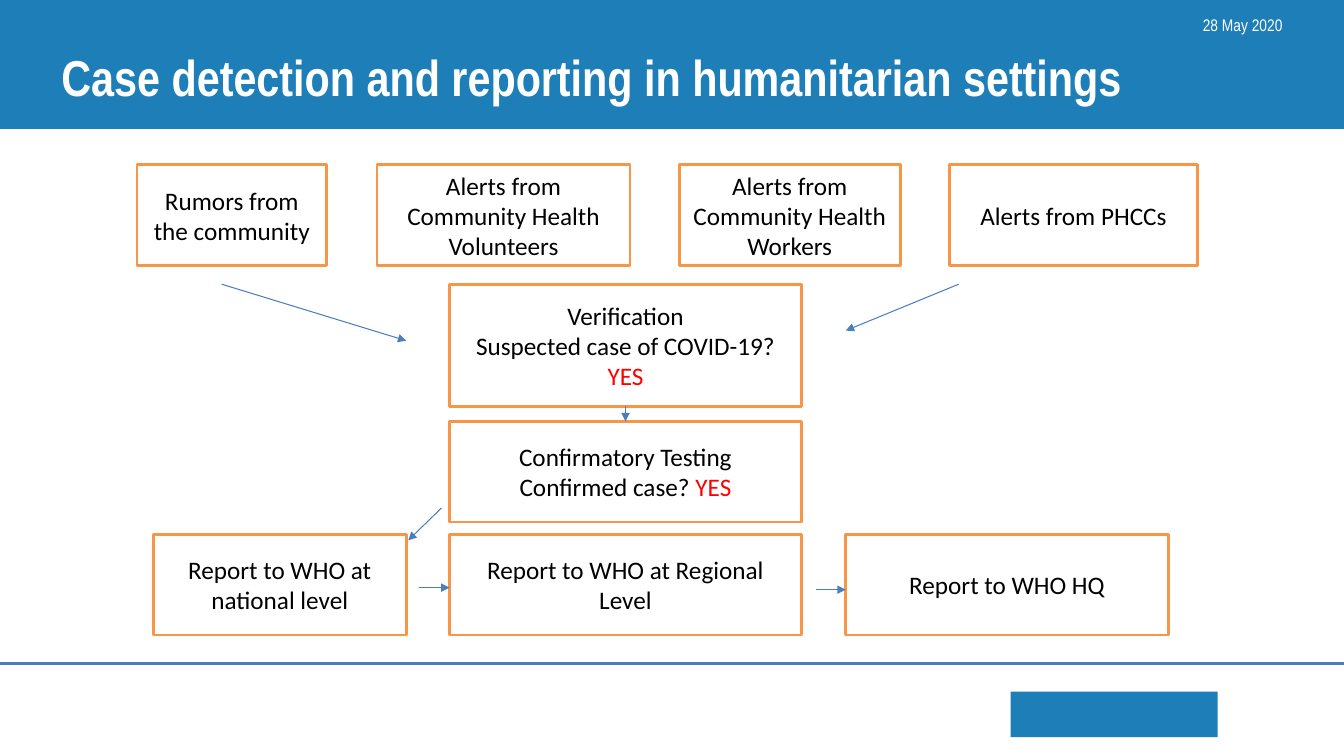
from lxml import etree
from pptx import Presentation, util as u
from pptx.dml.color import RGBColor
from pptx.enum import shapes, text
from pptx.oxml.ns import qn

# Content: lengths are hundredths of the slide's width and height
TITLE = "Case detection and reporting in humanitarian settings"
DATE = "28 May 2020"
HUES = {"band": "1E7FB8", "rule": "4B7EBC", "edge": "F79646",
        "white": "FFFFFF", "black": "000000", "red": "FF0000"}
MID = (33.45, 26.18)  # left and width of the middle column
LOW = 13.33           # usual box height

# Each row: top, height, then boxes of (left, width) and lines
ROWS = [
    (21.8, LOW, [
        ((10.2, 14.1), ["Rumors from the community"]),
        ((28.05, 18.83), ["Alerts from Community Health Volunteers"]),
        ((50.55, 16.43), ["Alerts from Community Health Workers"]),
        ((70.65, 18.45), ["Alerts from PHCCs"])]),
    (37.6, 16.13, [
        (MID, ["Verification", "Suspected case of COVID-19?", "YES"])]),
    (55.73, LOW, [
        (MID, ["Confirmatory Testing", "Confirmed case? YES"])]),
    (70.67, LOW, [
        ((11.4, 18.83), ["Report to WHO at national level"]),
        (MID, ["Report to WHO at Regional Level"]),
        ((62.93, 24), ["Report to WHO HQ"])]),
]
AXIS = MID[0] + MID[1] / 2
ARROWS = [
    (16.5, 37.6, 30.23, 45.07),
    (71.33, 37.6, 62.93, 43.73),
    (AXIS, 53.73, AXIS, 55.73),
    (32.85, 67.2, 30.38, 71.47),
    (31.2, 77.73, MID[0], 77.73),
    (60.75, 78, 62.93, 78),
]

deck = Presentation()
deck.slide_width, deck.slide_height = u.Inches(13.333), u.Inches(7.5)
slide = deck.slides.add_slide(deck.slide_layouts[6])


def hue(name):
    return RGBColor.from_string(HUES[name])


def across(share):
    return round(deck.slide_width * share / 100)


def down(share):
    return round(deck.slide_height * share / 100)


def place(left, top, width, height):
    return across(left), down(top), across(width), down(height)


def style(font, face, size, color, bold=False):
    font.name, font.size, font.bold = face, u.Pt(size), bold
    font.color.rgb = hue(color)


def block(spot, fill, edge=None):
    box = slide.shapes.add_shape(shapes.MSO_SHAPE.RECTANGLE, *place(*spot))
    box.shadow.inherit = False
    box.fill.solid()
    box.fill.fore_color.rgb = hue(fill)
    if edge:
        box.line.color.rgb, box.line.width = hue(edge), u.Pt(2)
    else:
        box.line.fill.background()
    return box


def label(spot, words, size, align, bold=False):
    frame = slide.shapes.add_textbox(*place(*spot)).text_frame
    frame.word_wrap = True
    frame.vertical_anchor = text.MSO_ANCHOR.MIDDLE
    para = frame.paragraphs[0]
    para.text, para.alignment = words, align
    style(para.font, "Arial Narrow", size, "white", bold)


def step(spot, lines):
    frame = block(spot, "white", "edge").text_frame
    frame.word_wrap = True
    frame.vertical_anchor = text.MSO_ANCHOR.MIDDLE
    for i, line in enumerate(lines):
        para = frame.add_paragraph() if i else frame.paragraphs[0]
        para.alignment = text.PP_ALIGN.CENTER
        style(para.font, "Calibri", 18, "black")
        lead, yes, _ = line.partition("YES")
        if lead:
            para.add_run().text = lead
        if yes:
            run = para.add_run()
            run.text = yes
            run.font.color.rgb = hue("red")


def link(x1, y1, x2, y2, width, head=False):
    line = slide.shapes.add_connector(
        shapes.MSO_CONNECTOR.STRAIGHT,
        across(x1), down(y1), across(x2), down(y2))
    line.line.color.rgb, line.line.width = hue("rule"), u.Pt(width)
    props = line.element.spPr
    if head:
        etree.SubElement(props.find(qn("a:ln")), qn("a:tailEnd"), type="triangle")
    etree.SubElement(props, qn("a:effectLst"))


# Header band, footer rule and plain footer mark
block((0, -0.4, 100, 17.47), "band")
block((75.2, 91.5, 15.4, 6), "band")
link(0, 87.73, 100, 87.73, 2)

# Title and date
label((3.83, 1.73, 90, 16.67), TITLE, 36, text.PP_ALIGN.LEFT, True)
label((72.83, 0.67, 23.33, 5.33), DATE, 12, text.PP_ALIGN.RIGHT)

# Flow chart
for top, height, boxes in ROWS:
    for (left, width), lines in boxes:
        step((left, top, width, height), lines)
for ends in ARROWS:
    link(*ends, 0.75, head=True)

deck.save("out.pptx")
